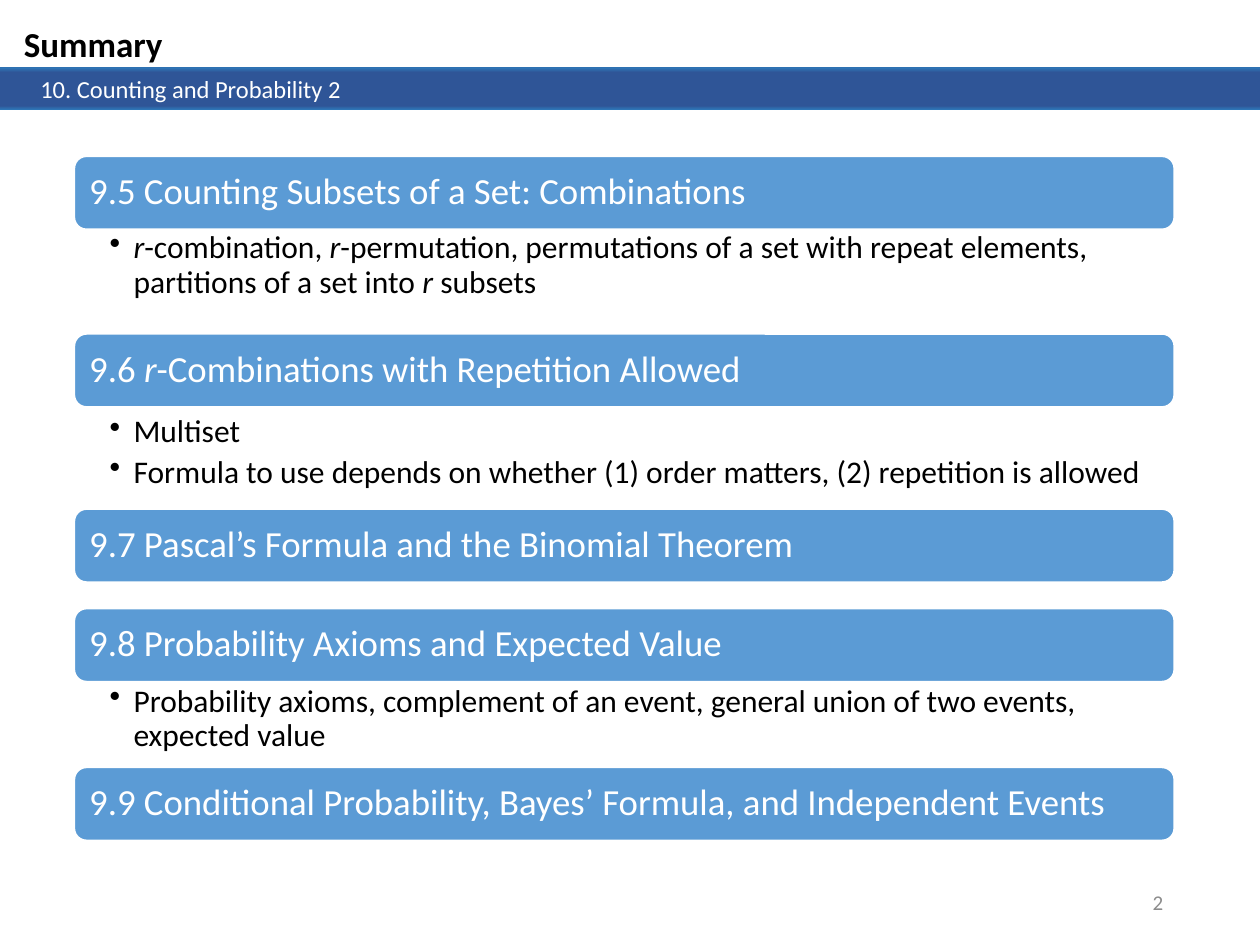
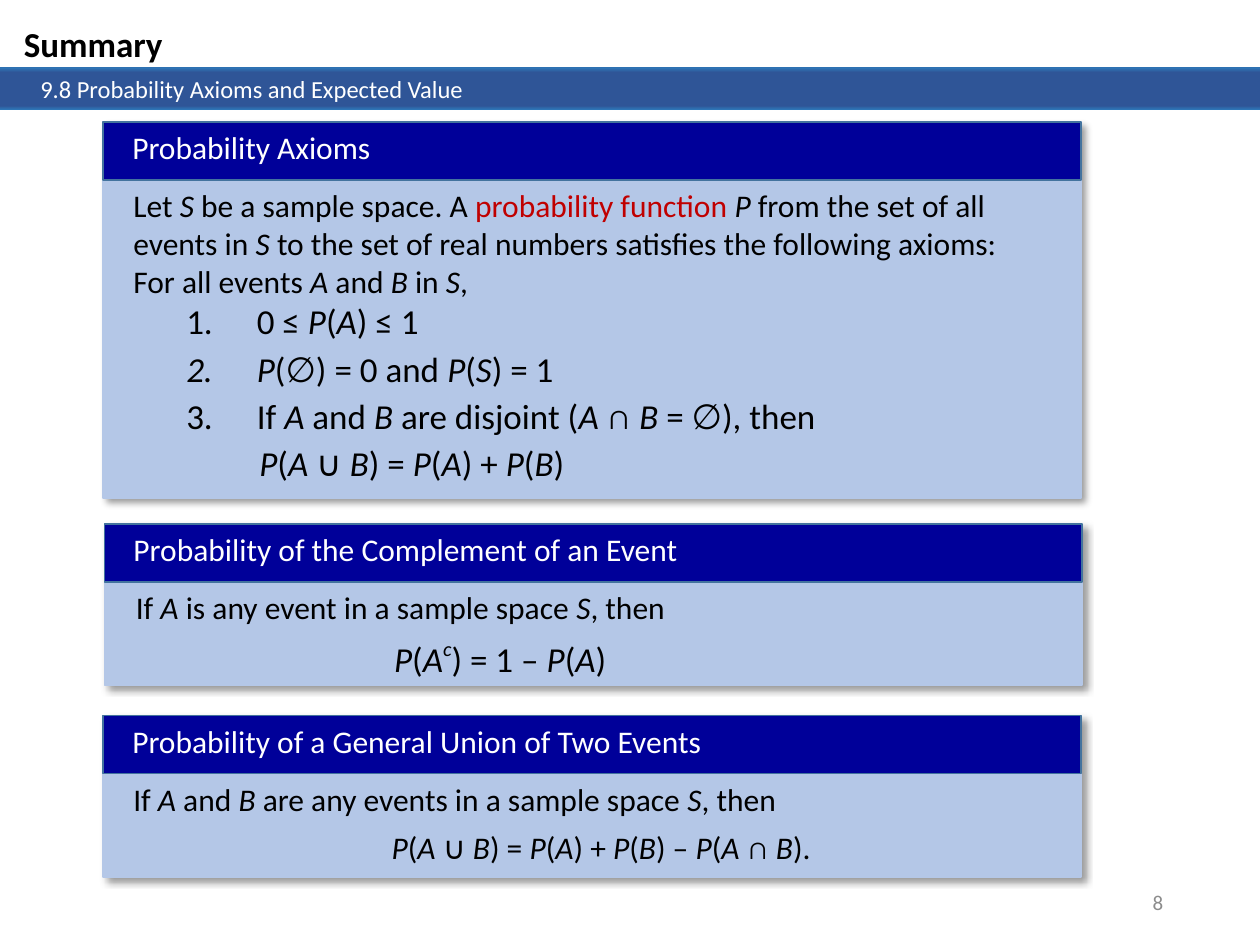
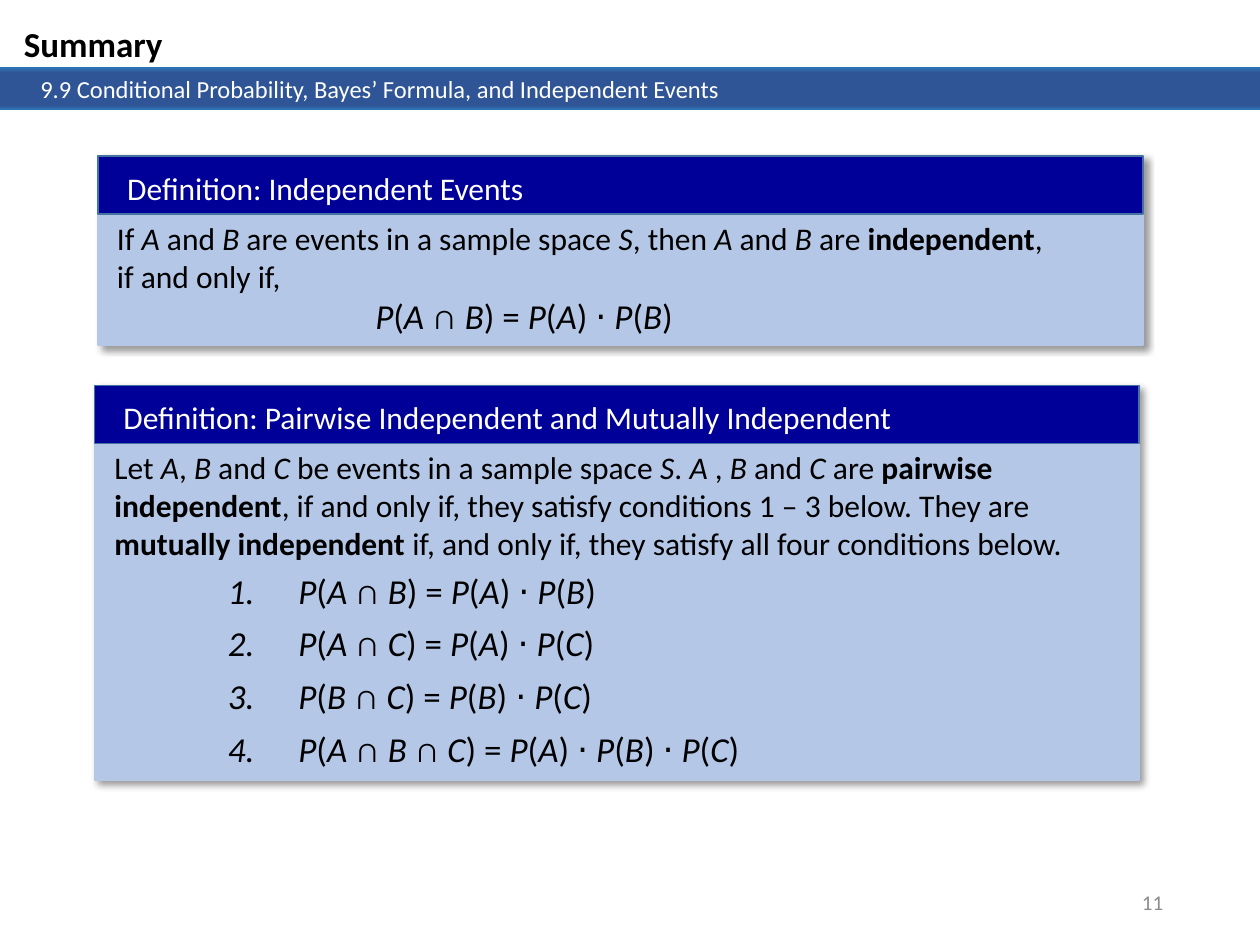
"""Build three summary slides on counting and probability."""
from itertools import groupby

from pptx import Presentation
from pptx.dml.color import RGBColor
from pptx.enum.shapes import MSO_SHAPE as Shape
from pptx.enum.text import MSO_ANCHOR as Anchor, PP_ALIGN as Align
from pptx.oxml import parse_xml
from pptx.oxml.ns import nsdecls
from pptx.util import Inches, Pt

FONT = "Calibri"
BLACK = RGBColor(0x00, 0x00, 0x00)
WHITE = RGBColor(0xFF, 0xFF, 0xFF)
GREY = RGBColor(0x8C, 0x8C, 0x8C)
RED = RGBColor(0xC0, 0x00, 0x00)
BLUE = RGBColor(0x5B, 0x9B, 0xD5)
NAVY = RGBColor(0x00, 0x00, 0x99)
STEEL = RGBColor(0x43, 0x73, 0x9E)
PALE = RGBColor(0xB4, 0xC7, 0xE7)
EDGE = RGBColor(0x2E, 0x75, 0xB6)
CORE = RGBColor(0x2F, 0x55, 0x97)

STOPS = "".join(
    f'<a:gs pos="{pos * 1000}"><a:srgbClr val="{hue}"/></a:gs>'
    for pos, hue in ((0, EDGE), (11, CORE), (91, CORE), (100, EDGE)))
GRAD = (f'<a:gradFill {nsdecls("a")} rotWithShape="1"><a:gsLst>{STOPS}</a:gsLst>'
        '<a:lin ang="5400000" scaled="0"/></a:gradFill>')
SHADE = (f'<a:effectLst {nsdecls("a")}><a:outerShdw blurRad="50800" dist="38100" '
         'dir="2700000" algn="tl" rotWithShape="0"><a:srgbClr val="000000">'
         '<a:alpha val="40000"/></a:srgbClr></a:outerShdw></a:effectLst>')
DOT = f'<a:buChar {nsdecls("a")} char="•"/>'
NUM = f'<a:buAutoNum {nsdecls("a")} type="arabicPeriod"/>'

PLAIN = dict(size=18)
LEAD = dict(size=18, after=6)
HEAD = dict(size=21, space=0.9)
ITEM = dict(size=18, after=3.6, space=0.9, left=0.19, hang=0.19, mark=DOT)
AXIOM = dict(size=20, after=3, left=0.98, hang=0.56, mark=NUM)
REST = dict(size=20, after=3, left=1)
RULE = dict(size=20, after=6, left=2.05)
UNION = dict(size=18, after=6, left=2.05)
LIST = dict(size=20, after=6, left=0.56, hang=0.56, mark=NUM)


def write(frame, lines, color=BLACK):
    """Fill a frame; _italic_, *bold*, ~red~ and ^raised^ mark up a line."""
    frame.word_wrap = True
    for row, (style, line) in enumerate(lines):
        para = frame.add_paragraph() if row else frame.paragraphs[0]
        para.alignment = Align.LEFT
        para.font.name = FONT
        para.font.size = Pt(style["size"])
        para.font.color.rgb = color
        para.line_spacing = style.get("space", 1.0)
        para.space_after = Pt(style.get("after", 0))
        props = para._p.get_or_add_pPr()
        props.set("marL", str(Inches(style.get("left", 0))))
        props.set("indent", str(-Inches(style.get("hang", 0))))
        if "mark" in style:
            props.insert_element_before(parse_xml(style["mark"]), "a:tabLst", "a:defRPr")
        on = set()
        for mark, chars in groupby(line, "_*~^".find):
            if mark >= 0:
                on ^= {mark}
                continue
            run = para.add_run()
            run.text = "".join(chars)
            if 0 in on:
                run.font.italic = True
            if 1 in on:
                run.font.bold = True
            if 2 in on:
                run.font.color.rgb = RED
            if 3 in on:
                run._r.get_or_add_rPr().set("baseline", "44000")


def block(slide, kind, box, fill=None, line=None):
    """Add a shape without shadow, its text starting at the top."""
    shape = slide.shapes.add_shape(kind, *map(Inches, box))
    shape.shadow.inherit = False
    shape.text_frame.vertical_anchor = Anchor.TOP
    if fill is None:
        shape.fill.background()
    else:
        shape.fill.solid()
        shape.fill.fore_color.rgb = fill
    if line is None:
        shape.line.fill.background()
    else:
        shape.line.color.rgb = line
        shape.line.width = Pt(1)
    return shape


deck = Presentation()
deck.slide_width, deck.slide_height = Inches(10), Inches(7.5)

topics = [
    ("10. Counting and Probability 2", "2"),
    ("9.8 Probability Axioms and Expected Value", "8"),
    ("9.9 Conditional Probability, Bayes’ Formula, and Independent Events", "11"),
]
pages = []
for topic, num in topics:
    page = deck.slides.add_slide(deck.slide_layouts[6])
    pages.append(page)
    for top, high in ((0.53, 0.3), (0.54, 0.33)):
        band = block(page, Shape.RECTANGLE, (0, top, 10, high))
        props = band._element.spPr
        props.replace(props.find(".//{*}noFill"), parse_xml(GRAD))
    band.text_frame.margin_left = Inches(0.32)
    write(band.text_frame, [(dict(size=14), topic)], WHITE)
    title = page.shapes.add_textbox(*map(Inches, (0.09, 0.13, 2.69, 0.44)))
    write(title.text_frame, [(dict(size=20), "*Summary*")])
    foot = page.shapes.add_textbox(*map(Inches, (7.08, 6.96, 2.25, 0.4)))
    foot.text_frame.vertical_anchor = Anchor.MIDDLE
    write(foot.text_frame, [(dict(size=12), num)], GREY)
    foot.text_frame.paragraphs[0].alignment = Align.RIGHT

parts = [
    (1.24, "9.5 Counting Subsets of a Set: Combinations", 1.81, [
        "_r_-combination, _r_-permutation, permutations of a set with repeat elements, "
        "partitions of a set into _r_ subsets"]),
    (2.65, "9.6 _r_-Combinations with Repetition Allowed", 3.27, [
        "Multiset",
        "Formula to use depends on whether (1) order matters, (2) repetition is allowed"]),
    (4.04, "9.7 Pascal’s Formula and the Binomial Theorem", 0, []),
    (4.83, "9.8 Probability Axioms and Expected Value", 5.41, [
        "Probability axioms, complement of an event, general union of two events, "
        "expected value"]),
    (6.09, "9.9 Conditional Probability, Bayes’ Formula, and Independent Events", 0, []),
]
for top, name, low, items in parts:
    bar = block(pages[0], Shape.ROUNDED_RECTANGLE, (0.59, top, 8.73, 0.58), BLUE, WHITE)
    frame = bar.text_frame
    frame.vertical_anchor = Anchor.MIDDLE
    frame.margin_left = frame.margin_right = Inches(0.09)
    write(frame, [(HEAD, name)], WHITE)
    if items:
        frame = pages[0].shapes.add_textbox(*map(Inches, (0.59, low, 8.73, 0.6))).text_frame
        frame.margin_left, frame.margin_right = Inches(0.28), Inches(0.14)
        frame.margin_top = frame.margin_bottom = Inches(0.03)
        write(frame, [(ITEM, item) for item in items])

cards = [
    (pages[1], (0.82, 0.97, 7.76, 2.98), 0.05, "Probability Axioms", [
        ((0.96, 1.43, 7.61, 2.57), [
            (PLAIN, "Let _S _be a sample space. A ~probability function ~_P_ from the set of "
                    "all events in _S _to the set of real numbers satisfies the following axioms:"),
            (PLAIN, "For all events _A _and _B_ in _S_,"),
            (AXIOM, "0 ≤ _P_(_A_) ≤ 1"),
            (AXIOM, "_P_(∅) = 0 and _P_(_S_) = 1"),
            (AXIOM, "If _A_ and _B_ are disjoint (_A_ ∩ _B_ = ∅), then"),
            (REST, "_P_(_A_ ∪ _B_) = _P_(_A_) + _P_(_B_)")])]),
    (pages[1], (0.83, 4.16, 7.76, 1.28), 0.05, "Probability of the Complement of an Event", [
        ((0.98, 4.62, 6.47, 0.82), [
            (LEAD, "If _A_ is any event in a sample space _S_, then"),
            (RULE, "_P_(_A^c^_) = 1 – _P_(_A_)")])]),
    (pages[1], (0.82, 5.68, 7.76, 1.28), 0.05, "Probability of a General Union of Two Events", [
        ((0.96, 6.14, 6.47, 0.79), [
            (LEAD, "If _A_ and _B_ are any events in a sample space _S_, then"),
            (UNION, "_P_(_A _∪ _B_) = _P_(_A_) + _P_(_B_) – _P_(_A _∩ _B_).")])]),
    (pages[2], (0.78, 1.24, 8.29, 1.5), 0.1, "Definition: Independent Events", [
        ((0.83, 1.69, 7.61, 1.04), [
            (PLAIN, "If _A_ and _B_ are events in a sample space _S_, then _A_ and _B_ are "
                    "*independent*, if and only if,"),
            (RULE, "_P_(_A_ ∩ _B_) = _P_(_A_) ⋅ _P_(_B_)")])]),
    (pages[2], (0.75, 3.06, 8.29, 3.13), 0.1,
     "Definition: Pairwise Independent and Mutually Independent", [
        ((0.81, 3.51, 8.04, 1.01), [
            (LEAD, "Let _A_, _B_ and _C_ be events in a sample space _S_. _A_ , _B_ and _C_ are "
                   "*pairwise independent*, if and only if, they satisfy conditions 1 – 3 below. "
                   "They are *mutually independent *if, and only if, they satisfy all four "
                   "conditions below.")]),
        ((1.71, 4.47, 4.66, 1.7), [
            (LIST, "_P_(_A_ ∩ _B_) = _P_(_A_) ⋅ _P_(_B_)"),
            (LIST, "_P_(_A_ ∩ _C_) = _P_(_A_) ⋅ _P_(_C_)"),
            (LIST, "_P_(_B_ ∩ _C_) = _P_(_B_) ⋅ _P_(_C_)"),
            (LIST, "_P_(_A_ ∩ _B _∩ _C_) = _P_(_A_) ⋅ _P_(_B_) ⋅ _P_(_C_)")])]),
]
for page, box, inset, name, texts in cards:
    base = block(page, Shape.RECTANGLE, box, PALE, PALE)
    props = base._element.spPr
    props.replace(props.find("{*}effectLst"), parse_xml(SHADE))
    left, top, wide, high = box
    bar = block(page, Shape.RECTANGLE, (left, top, wide, 0.46), NAVY, STEEL)
    bar.text_frame.margin_left, bar.text_frame.margin_top = Inches(0.23), Inches(inset)
    write(bar.text_frame, [(PLAIN, name)], WHITE)
    for area, lines in texts:
        body = page.shapes.add_textbox(*map(Inches, area))
        write(body.text_frame, lines)

deck.save("out.pptx")
